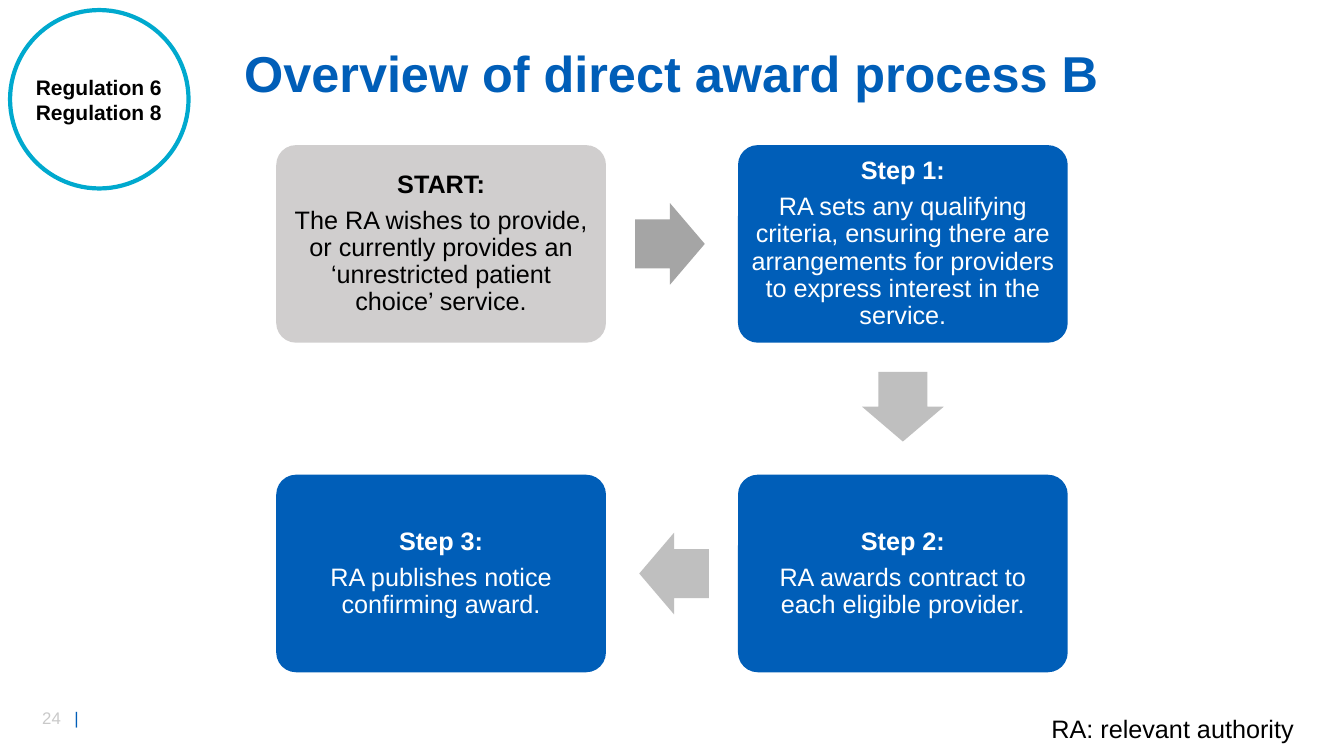
import pptx
import pptx.util
import pptx.dml.color
import pptx.enum.shapes
import pptx.enum.text
import pptx.oxml.ns
import lxml.etree

SHAPE = pptx.enum.shapes.MSO_SHAPE
ALIGN = pptx.enum.text.PP_ALIGN
ANCHOR = pptx.enum.text.MSO_ANCHOR

THEME = {
    "font": "Arial",
    "blue": "005EB8", "teal": "00A9CE", "white": "FFFFFF", "black": "000000",
    "start": "D0CECE", "first": "A5A5A5", "arrow": "BFBFBF", "page": "C9C9C9",
    "title": 36, "body": 18, "badge": 15, "small": 12,
}

TITLE = "Overview of direct award process B"
BADGE = ["Regulation 6", "Regulation 8"]
NOTE = "RA: relevant authority"
PAGE = "24"
STEPS = [
    (0, 0, "START:", "The RA wishes to provide, or currently provides an ‘unrestricted patient choice’ service.", "start", "black"),
    (1, 0, "Step 1:", "RA sets any qualifying criteria, ensuring there are arrangements for providers to express interest in the service.", "blue", "white"),
    (1, 1, "Step 2:", "RA awards contract to each eligible provider.", "blue", "white"),
    (0, 1, "Step 3:", "RA publishes notice confirming award.", "blue", "white"),
]
ARROWS = {(1, 0): SHAPE.RIGHT_ARROW, (0, 1): SHAPE.DOWN_ARROW, (-1, 0): SHAPE.LEFT_ARROW}

WIDE, HIGH = 13.33, 7.5
LEFT, TOP = 2.74, 1.44
CARD_W, CARD_H = 3.27, 1.96
STEP_X, STEP_Y = 4.58, 3.27
LONG, BROAD, BACK = 0.69, 0.81, 0.02

deck = pptx.Presentation()
deck.slide_width = pptx.util.Inches(WIDE)
deck.slide_height = pptx.util.Inches(HIGH)
slide = deck.slides.add_slide(deck.slide_layouts[6])


def tint(name):
    return pptx.dml.color.RGBColor.from_string(THEME[name])


def place(*box):
    return [pptx.util.Inches(v) for v in box]


def write(para, text, size, color, bold=False):
    run = para.add_run()
    run.text = text
    run.font.name = THEME["font"]
    run.font.size = pptx.util.Pt(THEME[size])
    run.font.color.rgb = tint(color)
    run.font.bold = bold


def label(box, align=ALIGN.LEFT, wrap=False, anchor=ANCHOR.TOP):
    frame = slide.shapes.add_textbox(*place(*box)).text_frame
    frame.word_wrap = wrap
    frame.vertical_anchor = anchor
    para = frame.paragraphs[0]
    para.alignment = align
    return para


def draw(kind, box, fill, line=None):
    shape = slide.shapes.add_shape(kind, *place(*box))
    shape.shadow.inherit = False
    shape.fill.solid()
    shape.fill.fore_color.rgb = tint(fill)
    if line:
        shape.line.color.rgb = tint(line)
        shape.line.width = pptx.util.Pt(3)
    else:
        shape.line.fill.background()
    return shape


def card(col, row, head, body, fill, ink):
    box = (LEFT + col * STEP_X, TOP + row * STEP_Y, CARD_W, CARD_H)
    shape = draw(SHAPE.ROUNDED_RECTANGLE, box, fill)
    shape.adjustments[0] = 0.1
    frame = shape.text_frame
    frame.word_wrap = True
    frame.vertical_anchor = ANCHOR.MIDDLE
    frame.margin_left = frame.margin_right = pptx.util.Inches(0.07)
    frame.margin_top = frame.margin_bottom = pptx.util.Inches(0.07)
    for para, text, bold in ((frame.paragraphs[0], head, True), (frame.add_paragraph(), body, False)):
        para.alignment = ALIGN.CENTER
        para.line_spacing = 0.9
        para.space_after = pptx.util.Pt(6.3)
        write(para, text, "body", ink, bold)


def arrow(start, end, fill):
    dx, dy = end[0] - start[0], end[1] - start[1]
    wide, high = (LONG, BROAD) if dx else (BROAD, LONG)
    mid_x = LEFT + CARD_W / 2 + (start[0] + end[0]) / 2 * STEP_X - dx * BACK
    mid_y = TOP + CARD_H / 2 + (start[1] + end[1]) / 2 * STEP_Y - dy * BACK
    shape = draw(ARROWS[dx, dy], (mid_x - wide / 2, mid_y - high / 2, wide, high), fill)
    shape.adjustments[0] = 0.6
    shape.adjustments[1] = 0.5


page = label((0.32, 6.97, 0.71, 0.3))
tabs = lxml.etree.SubElement(page._p.get_or_add_pPr(), pptx.oxml.ns.qn("a:tabLst"))
lxml.etree.SubElement(tabs, pptx.oxml.ns.qn("a:tab"), pos=str(pptx.util.Inches(0.32)), algn="l")
write(page, PAGE + "\t", "small", "page")
write(page, "|", "small", "blue")

title = label((2.13, 0.42, 9.06, 0.67), ALIGN.CENTER, True, ANCHOR.MIDDLE)
title.line_spacing = 0.9
write(title, TITLE, "title", "blue", True)

for step in STEPS:
    card(*step)
for i, (start, end) in enumerate(zip(STEPS, STEPS[1:])):
    arrow(start[:2], end[:2], "arrow" if i else "first")

write(label((10.33, 7.03, 2.63, 0.4)), NOTE, "body", "black")

draw(SHAPE.OVAL, (0.1, 0.1, 1.77, 1.77), "white", "teal")
badge = label((0.22, 0.69, 1.52, 0.61), ALIGN.CENTER)
for i, text in enumerate(BADGE):
    if i:
        badge.add_line_break()
    write(badge, text, "badge", "black", True)

deck.save("out.pptx")
